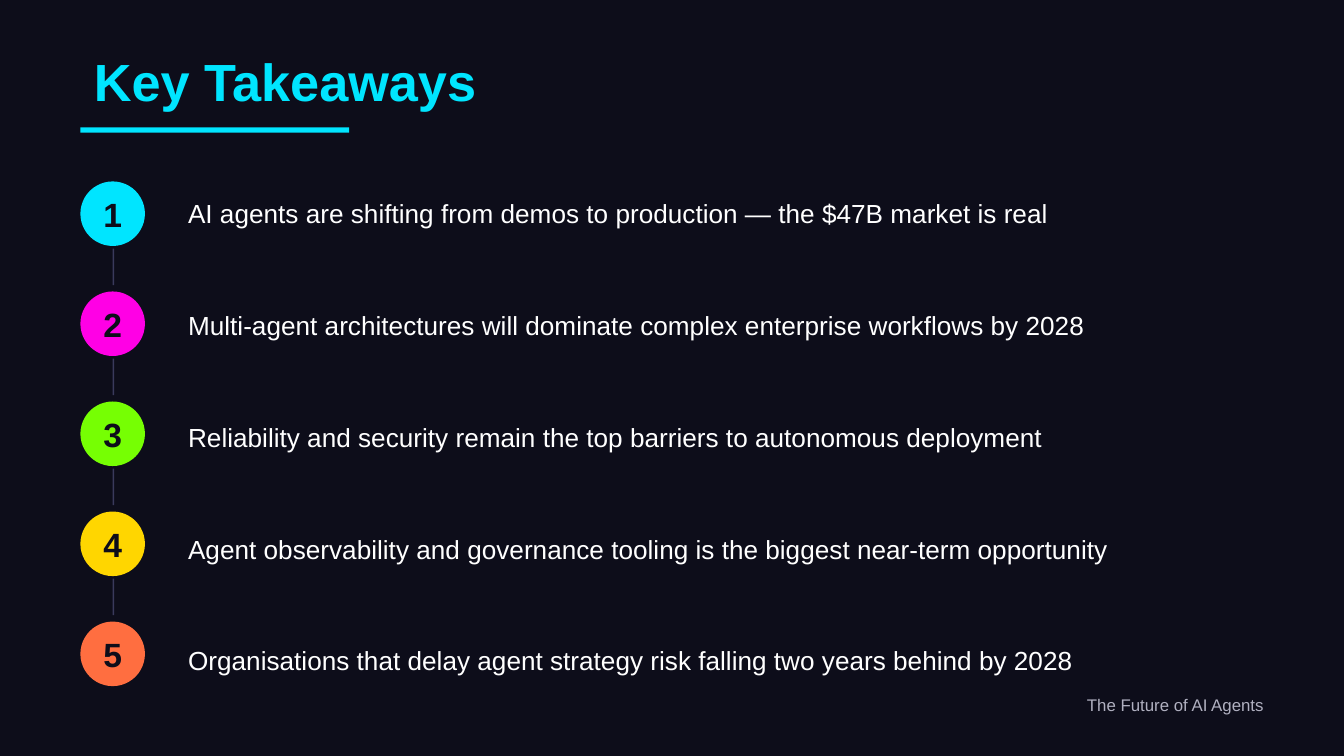
"""Build the key takeaways slide."""
import pptx
import pptx.dml.color
import pptx.enum.shapes
import pptx.enum.text
import pptx.oxml.ns
import pptx.util
from lxml import etree

Cm = pptx.util.Cm
Pt = pptx.util.Pt
RGB = pptx.dml.color.RGBColor
KIND = pptx.enum.shapes.MSO_SHAPE
ALIGN = pptx.enum.text.PP_ALIGN
MID = pptx.enum.text.MSO_ANCHOR.MIDDLE
FIXED = pptx.enum.text.MSO_AUTO_SIZE.NONE

NIGHT = RGB(0x0D, 0x0D, 0x1A)
CYAN = RGB(0x00, 0xE5, 0xFF)
PINK = RGB(0xFF, 0x00, 0xE5)
LIME = RGB(0x76, 0xFF, 0x03)
GOLD = RGB(0xFF, 0xD6, 0x00)
CORAL = RGB(0xFF, 0x6E, 0x40)
WHITE = RGB(0xFF, 0xFF, 0xFF)
GREY = RGB(0xB0, 0xB0, 0xC0)
SLATE = RGB(0x3A, 0x3A, 0x5C)

LEFT, TOP, DISC, STEP = 1.52, 3.43, 1.22, 2.08
ITEMS = [
    ("AI agents are shifting from demos to production — the $47B market is real", CYAN),
    ("Multi-agent architectures will dominate complex enterprise workflows by 2028", PINK),
    ("Reliability and security remain the top barriers to autonomous deployment", LIME),
    ("Agent observability and governance tooling is the biggest near-term opportunity", GOLD),
    ("Organisations that delay agent strategy risk falling two years behind by 2028", CORAL),
]


class Deck:
    """Hold the style and the current slide."""

    def __init__(self, slide):
        self.slide = slide
        self.base = {"name": "Arial", "bold": False}
        fill = slide.background.fill
        fill.solid()
        fill.fore_color.rgb = NIGHT

    def label(self, para, text, color, align=ALIGN.LEFT, **look):
        """Put styled text in a paragraph."""
        para.text = text
        para.alignment = align
        for key, value in {**self.base, **look}.items():
            setattr(para.font, key, value)
        para.font.color.rgb = color

    def frame(self, shape, **extra):
        """Set up the text frame of a shape."""
        look = {"word_wrap": True, "auto_size": FIXED, "vertical_anchor": MID}
        for key, value in {**look, **extra}.items():
            setattr(shape.text_frame, key, value)
        return shape.text_frame

    def place(self, shape, box):
        """Move a shape to a box given in centimetres."""
        for key, value in zip(("left", "top", "width", "height"), box):
            setattr(shape, key, Cm(value))

    def title(self, text, box):
        """Fill the title placeholder."""
        shape = self.slide.shapes.title
        self.place(shape, box)
        para = self.frame(shape).paragraphs[0]
        self.label(para, text, CYAN, size=Pt(28), bold=True)

    def points(self, lines, box, gap):
        """Fill the body placeholder with evenly spaced lines."""
        shape = self.slide.placeholders[1]
        self.place(shape, box)
        frame = self.frame(shape)
        for num, line in enumerate(lines):
            para = frame.add_paragraph() if num else frame.paragraphs[0]
            props = para._p.get_or_add_pPr()
            props.set("marL", "0")
            props.set("indent", "0")
            etree.SubElement(props, pptx.oxml.ns.qn("a:buNone"))
            self.label(para, line, WHITE, size=Pt(14))
            para.line_spacing = 1.2
            para.space_before = Pt(gap if num else 0)

    def block(self, kind, box, color):
        """Draw a plain filled shape."""
        shape = self.slide.shapes.add_shape(kind, *map(Cm, box))
        shape.shadow.inherit = False
        shape.fill.solid()
        shape.fill.fore_color.rgb = color
        shape.line.fill.background()
        return shape

    def badge(self, text, box, color):
        """Draw a numbered disc."""
        disc = self.block(KIND.OVAL, box, color)
        edges = dict.fromkeys(
            ("margin_left", "margin_right", "margin_top", "margin_bottom"), 0)
        para = self.frame(disc, **edges).paragraphs[0]
        self.label(para, text, NIGHT, ALIGN.CENTER, size=Pt(18), bold=True)

    def note(self, text, box):
        """Add the small right-aligned label."""
        shape = self.slide.shapes.add_textbox(*map(Cm, box))
        para = self.frame(shape).paragraphs[0]
        self.label(para, text, GREY, ALIGN.RIGHT, size=Pt(9))


def main():
    """Build and save the slide."""
    show = pptx.Presentation()
    show.slide_width, show.slide_height = Cm(25.4), Cm(14.29)
    deck = Deck(show.slides.add_slide(show.slide_layouts[1]))
    deck.title("Key Takeaways", (LEFT, 0.76, 22.35, 1.52))
    deck.block(KIND.RECTANGLE, (LEFT, 2.41, 5.08, 0.1), CYAN)
    deck.points([text for text, _ in ITEMS], (3.3, 3.3, 20.83, 9.8), 39.7)
    for num, (_, color) in enumerate(ITEMS):
        top = TOP + num * STEP
        deck.badge(str(num + 1), (LEFT, top, DISC, DISC), color)
        if num < len(ITEMS) - 1:
            deck.block(KIND.RECTANGLE, (2.13, top + 1.27, 0.03, 0.69), SLATE)
    deck.note("The Future of AI Agents", (1.27, 12.95, 22.86, 0.76))
    show.save("out.pptx")


if __name__ == "__main__":
    main()
